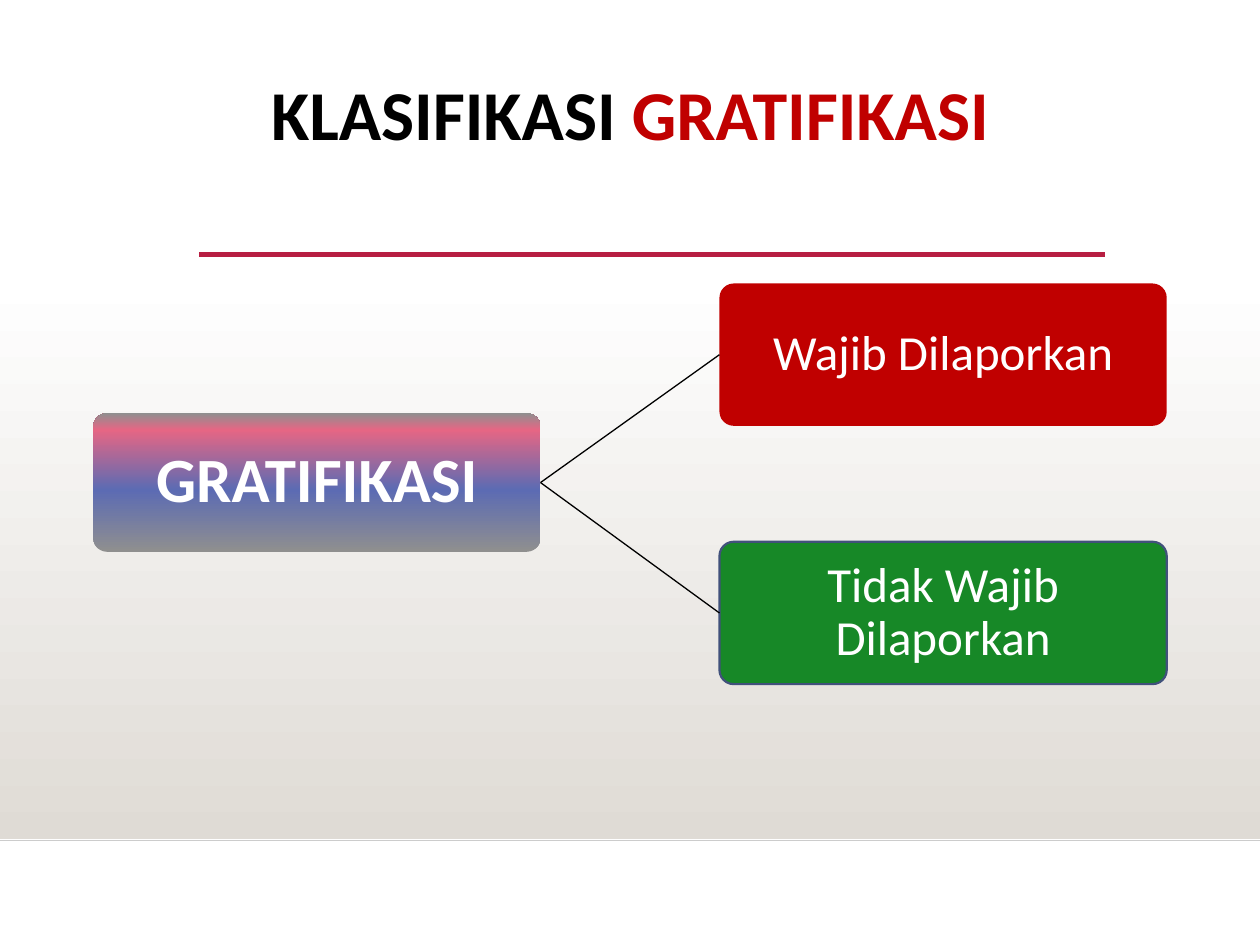
from lxml.etree import SubElement
from pptx import Presentation
from pptx.dml.color import RGBColor
from pptx.enum.shapes import MSO_CONNECTOR, MSO_SHAPE
from pptx.enum.text import MSO_ANCHOR, PP_ALIGN
from pptx.oxml.ns import qn
from pptx.util import Inches, Pt

BLACK = RGBColor(0x00, 0x00, 0x00)
WHITE = RGBColor(0xFF, 0xFF, 0xFF)
RED = RGBColor(0xC0, 0x00, 0x00)
GREEN = RGBColor(0x17, 0x88, 0x27)
NAVY = RGBColor(0x41, 0x51, 0x7B)
CRIMSON = RGBColor(0xB7, 0x1E, 0x42)
SAND = RGBColor(0xDF, 0xDB, 0xD5)
SILVER = RGBColor(0xCC, 0xCC, 0xCC)
GREY = RGBColor(0x8F, 0x8F, 0x8F)
BLUE = RGBColor(0x5C, 0x6B, 0xB3)
PINK = RGBColor(0xE6, 0x66, 0x84)


def fill_upward(shape, stops):
    """Fill with a gradient whose stops run from bottom to top."""
    shape.fill.gradient()
    shape.fill.gradient_angle = 90
    stop_list = next(shape.element.iter(qn("a:gsLst")))
    for old_stop in list(stop_list):
        stop_list.remove(old_stop)
    for percent, color in stops:
        stop = SubElement(stop_list, qn("a:gs"), pos=str(percent * 1000))
        SubElement(stop, qn("a:srgbClr"), val=str(color))


def add_line(x1, y1, x2, y2, color, width):
    line = slide.shapes.add_connector(
        MSO_CONNECTOR.STRAIGHT, Inches(x1), Inches(y1), Inches(x2), Inches(y2))
    line.line.color.rgb = color
    line.line.width = Pt(width)
    SubElement(line.element.spPr, qn("a:effectLst"))
    return line


prs = Presentation()
prs.slide_width, prs.slide_height = Inches(10), Inches(7.5)
slide = prs.slides.add_slide(prs.slide_layouts[5])

# Background band and rules
band = slide.shapes.add_shape(
    MSO_SHAPE.RECTANGLE, 0, Inches(2.2), Inches(10), Inches(4.46))
band.shadow.inherit = False
band.line.fill.background()
fill_upward(band, [(0, SAND), (100, WHITE)])
add_line(0, 6.67, 10, 6.67, SILVER, 1)
add_line(1.58, 2.02, 8.77, 2.02, CRIMSON, 2.5)

# Title
title = slide.shapes.title
title.left, title.top = 0, Inches(0.51)
title.width, title.height = Inches(10), Inches(0.77)
title.text_frame.vertical_anchor = MSO_ANCHOR.MIDDLE
heading = title.text_frame.paragraphs[0]
heading.alignment = PP_ALIGN.CENTER
for words, color in [("KLASIFIKASI ", BLACK), ("GRATIFIKASI", RED)]:
    run = heading.add_run()
    run.text = words
    run.font.color.rgb = color
    for name, value in {"name": "Calibri", "size": Pt(40), "bold": True}.items():
        setattr(run.font, name, value)

# Classification tree: the root, then its two branches
nodes = []
for label, left, top, height, size, bold in [
    ("GRATIFIKASI", 0.74, 3.28, 1.1, 36, True),
    ("Wajib Dilaporkan", 5.71, 2.25, 1.13, 28, False),
    ("Tidak Wajib Dilaporkan", 5.71, 4.3, 1.13, 28, False),
]:
    node = slide.shapes.add_shape(
        MSO_SHAPE.ROUNDED_RECTANGLE,
        Inches(left), Inches(top), Inches(3.55), Inches(height))
    node.adjustments[0] = 0.1
    node.shadow.inherit = False
    node.line.fill.background()
    frame = node.text_frame
    frame.text = label
    frame_format = {"word_wrap": True, "vertical_anchor": MSO_ANCHOR.MIDDLE}
    frame_format.update(dict.fromkeys(
        ["margin_left", "margin_top", "margin_right", "margin_bottom"],
        Inches(0.05)))
    for name, value in frame_format.items():
        setattr(frame, name, value)
    paragraph = frame.paragraphs[0]
    paragraph.alignment = PP_ALIGN.CENTER
    paragraph.line_spacing = 0.9
    font = paragraph.runs[0].font
    for name, value in {"name": "Calibri", "size": Pt(size), "bold": bold}.items():
        setattr(font, name, value)
    font.color.rgb = WHITE
    nodes.append(node)

gratification, reportable, exempt = nodes
fill_upward(gratification, [(0, GREY), (45, BLUE), (88, PINK), (100, GREY)])
for branch, color in [(reportable, RED), (exempt, GREEN)]:
    branch.fill.solid()
    branch.fill.fore_color.rgb = color
exempt.line.color.rgb = NAVY
exempt.line.width = Pt(1.25)

# Links from the root to each branch
for branch in (reportable, exempt):
    link = add_line(0, 0, 1, 1, BLACK, 0.75)
    link.begin_connect(gratification, 3)
    link.end_connect(branch, 1)

prs.save("out.pptx")
